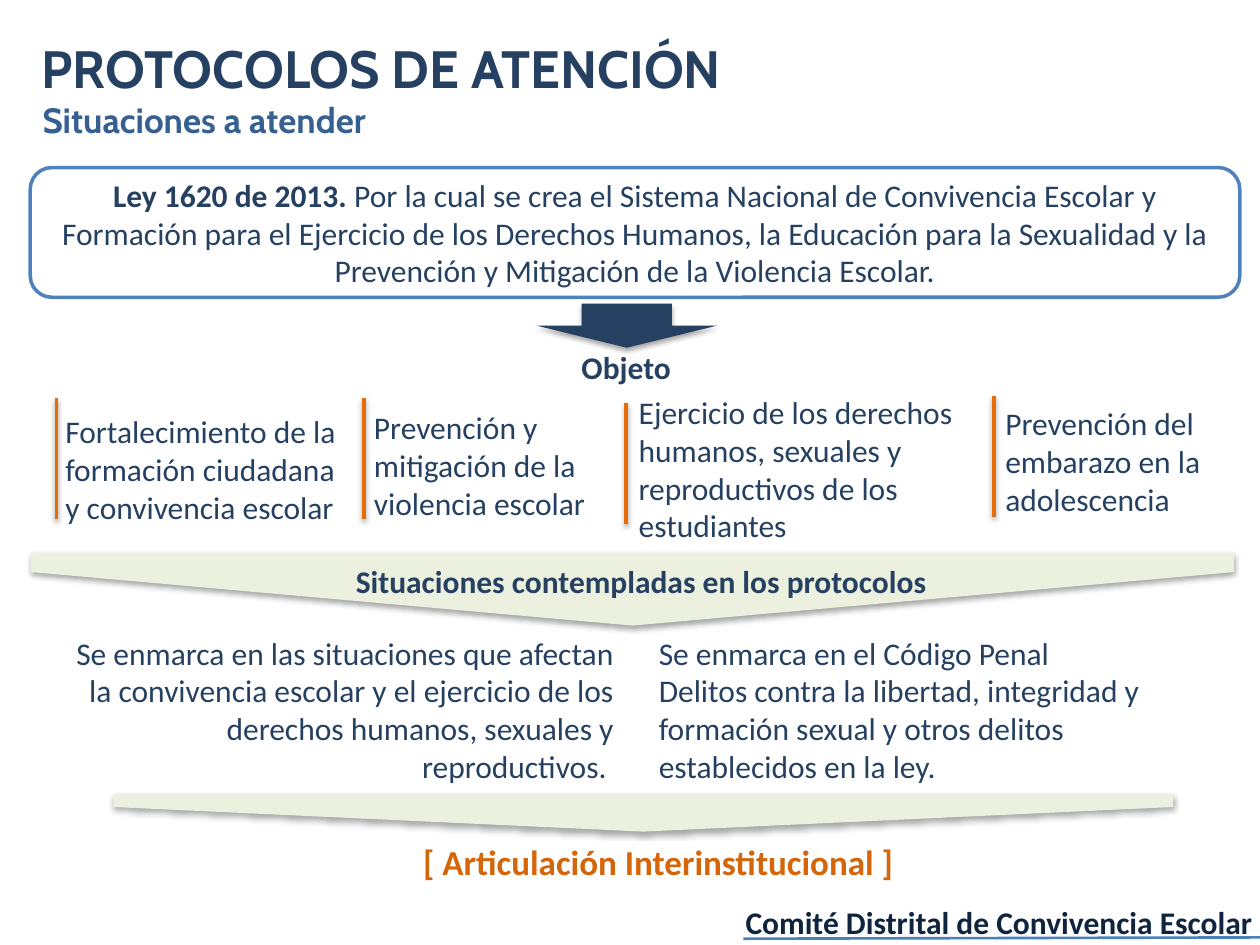
from dataclasses import dataclass

import lxml.etree
import pptx
import pptx.dml.color
import pptx.enum.shapes
import pptx.enum.text
import pptx.oxml.ns
import pptx.util

Inches = pptx.util.Inches
Pt = pptx.util.Pt
Align = pptx.enum.text.PP_ALIGN
Anchor = pptx.enum.text.MSO_ANCHOR
AutoSize = pptx.enum.text.MSO_AUTO_SIZE
Shape = pptx.enum.shapes.MSO_SHAPE


@dataclass(frozen=True)
class Theme:
    navy: str = "254061"
    blue: str = "376092"
    border: str = "4F81BD"
    footer: str = "0F243E"
    footer_rule: str = "4B7EBC"
    orange: str = "E46C0A"
    dark_orange: str = "D56509"
    pale_green: str = "EBF1DE"
    white: str = "FFFFFF"
    heading_font: str = "Cabin"
    body_font: str = "Calibri"
    title_size: int = 30
    accent_size: int = 20
    body_size: int = 18


@dataclass(frozen=True)
class Frame:
    left: float
    top: float
    width: float
    height: float


@dataclass(frozen=True)
class Goal:
    text: str
    frame: Frame
    bar_left: float
    bar_top: float


@dataclass(frozen=True)
class Plate:
    frame: Frame
    point: float


THEME = Theme()
BAR_HEIGHT = 0.96

GOALS = [
    Goal("Fortalecimiento de la formación ciudadana y convivencia escolar",
         Frame(0.42, 3.22, 2.39, 1.01), 0.45, 3.16),
    Goal("Prevención y mitigación de la violencia escolar",
         Frame(2.87, 3.19, 1.9, 1.01), 2.89, 3.16),
    Goal("Ejercicio de los derechos humanos, sexuales y reproductivos de los estudiantes",
         Frame(4.97, 3.07, 3.02, 1.31), 4.97, 3.2),
    Goal("Prevención del embarazo en la adolescencia",
         Frame(7.88, 3.16, 2.08, 1.01), 7.89, 3.14),
]

PLATES = [
    Plate(Frame(4.73, -0.1, 0.58, 9.55), 0.732),
    Plate(Frame(4.96, 2.25, 0.29, 8.41), 0.672),
]


def color(value: str) -> pptx.dml.color.RGBColor:
    return pptx.dml.color.RGBColor.from_string(value)


def place(frame: Frame) -> list[int]:
    return [Inches(v) for v in (frame.left, frame.top, frame.width, frame.height)]


def add_effects(item, opacity: int = 0, distance: float = 0) -> None:
    qn = pptx.oxml.ns.qn
    effects = lxml.etree.SubElement(item._element.spPr, qn("a:effectLst"))
    if opacity:
        shadow = lxml.etree.SubElement(
            effects, qn("a:outerShdw"), blurRad=str(Pt(3.1)),
            dist=str(Pt(distance)), dir="5400000", rotWithShape="0")
        black = lxml.etree.SubElement(shadow, qn("a:srgbClr"), val="000000")
        lxml.etree.SubElement(black, qn("a:alpha"), val=str(opacity * 1000))


def write_text(box, text: str, *, lead: str = "", size: int = THEME.body_size,
               font: str = THEME.body_font, ink: str = THEME.navy,
               bold: bool = False, align: Align = Align.LEFT) -> None:
    for index, line in enumerate(text.split("\n")):
        paragraphs = box.text_frame.paragraphs
        para = box.text_frame.add_paragraph() if index else paragraphs[0]
        para.alignment = align
        spans = [(lead, True)] if lead and not index else []
        for words, heavy in spans + [(line, bold)]:
            span = para.add_run()
            span.text = words
            span.font.name = font
            span.font.size = Pt(size)
            span.font.bold = heavy
            span.font.color.rgb = color(ink)


def add_text(slide, frame: Frame, text: str, *, wrap: bool = True, **style) -> None:
    box = slide.shapes.add_textbox(*place(frame))
    box.text_frame.word_wrap = wrap
    box.text_frame.auto_size = AutoSize.SHAPE_TO_FIT_TEXT
    write_text(box, text, **style)


def add_block(slide, preset: Shape, frame: Frame, fill: str):
    block = slide.shapes.add_shape(preset, *place(frame))
    block.fill.solid()
    block.fill.fore_color.rgb = color(fill)
    block.line.fill.background()
    return block


def add_rule(slide, start: tuple[float, float], end: tuple[float, float],
             ink: str, width: float, **shadow) -> None:
    rule = slide.shapes.add_connector(
        pptx.enum.shapes.MSO_CONNECTOR.STRAIGHT,
        *[Inches(v) for v in start + end])
    rule.line.color.rgb = color(ink)
    rule.line.width = Pt(width)
    add_effects(rule, **shadow)


def add_law_box(slide) -> None:
    box = add_block(slide, Shape.ROUNDED_RECTANGLE,
                    Frame(0.24, 1.33, 9.6, 1.03), THEME.white)
    box.line.color.rgb = color(THEME.border)
    box.line.width = Pt(2)
    add_effects(box)
    box.text_frame.word_wrap = True
    box.text_frame.vertical_anchor = Anchor.MIDDLE
    write_text(box, "Por la cual se crea el Sistema Nacional de Convivencia Escolar y "
               "Formación para el Ejercicio de los Derechos Humanos, la Educación para "
               "la Sexualidad y la Prevención y Mitigación de la Violencia Escolar.",
               lead="Ley 1620 de 2013. ", align=Align.CENTER)


def main() -> None:
    deck = pptx.Presentation()
    deck.slide_width, deck.slide_height = Inches(10), Inches(7.5)
    page = deck.slides.add_slide(deck.slide_layouts[6])

    for plate in PLATES:
        block = add_block(page, Shape.PENTAGON, plate.frame, THEME.pale_green)
        block.adjustments[0] = plate.point
        block.rotation = 90
        add_effects(block, opacity=35, distance=1.8)

    add_text(page, Frame(0.23, 0.24, 8.76, 0.61), "PROTOCOLOS DE ATENCIÓN",
             size=THEME.title_size, font=THEME.heading_font, bold=True)
    add_text(page, Frame(0.24, 0.73, 6.57, 0.44), "Situaciones a atender",
             size=THEME.accent_size, font=THEME.heading_font, ink=THEME.blue, bold=True)
    add_law_box(page)

    arrow = add_block(page, Shape.DOWN_ARROW, Frame(4.26, 2.41, 1.43, 0.35), THEME.navy)
    add_effects(arrow, opacity=35, distance=1.8)
    add_text(page, Frame(3.85, 2.71, 2.24, 0.4), "Objeto", bold=True, align=Align.CENTER)

    for goal in GOALS:
        add_text(page, goal.frame, goal.text)
        add_rule(page, (goal.bar_left, goal.bar_top),
                 (goal.bar_left, goal.bar_top + BAR_HEIGHT),
                 THEME.orange, 2, opacity=38, distance=1.6)

    add_text(page, Frame(1.69, 4.41, 6.8, 0.4),
             "Situaciones contempladas en los protocolos", bold=True, align=Align.CENTER)
    add_text(page, Frame(0.29, 4.98, 4.68, 1.31),
             "Se enmarca en las situaciones que afectan la convivencia escolar y el "
             "ejercicio de los derechos humanos, sexuales y reproductivos. ",
             align=Align.RIGHT)
    add_text(page, Frame(5.13, 4.98, 4.71, 1.31),
             "Se enmarca en el Código Penal\nDelitos contra la libertad, integridad y "
             "formación sexual y otros delitos establecidos en la ley.")
    add_text(page, Frame(2.14, 6.62, 6.17, 0.44), "[ Articulación Interinstitucional ]",
             size=THEME.accent_size, ink=THEME.dark_orange, bold=True, align=Align.CENTER)

    add_text(page, Frame(5.79, 7.12, 4.25, 0.4), "Comité Distrital de Convivencia Escolar",
             wrap=False, ink=THEME.footer, bold=True, align=Align.RIGHT)
    add_rule(page, (5.9, 7.45), (10, 7.44), THEME.footer_rule, 1.5)

    deck.save("out.pptx")


if __name__ == "__main__":
    main()
